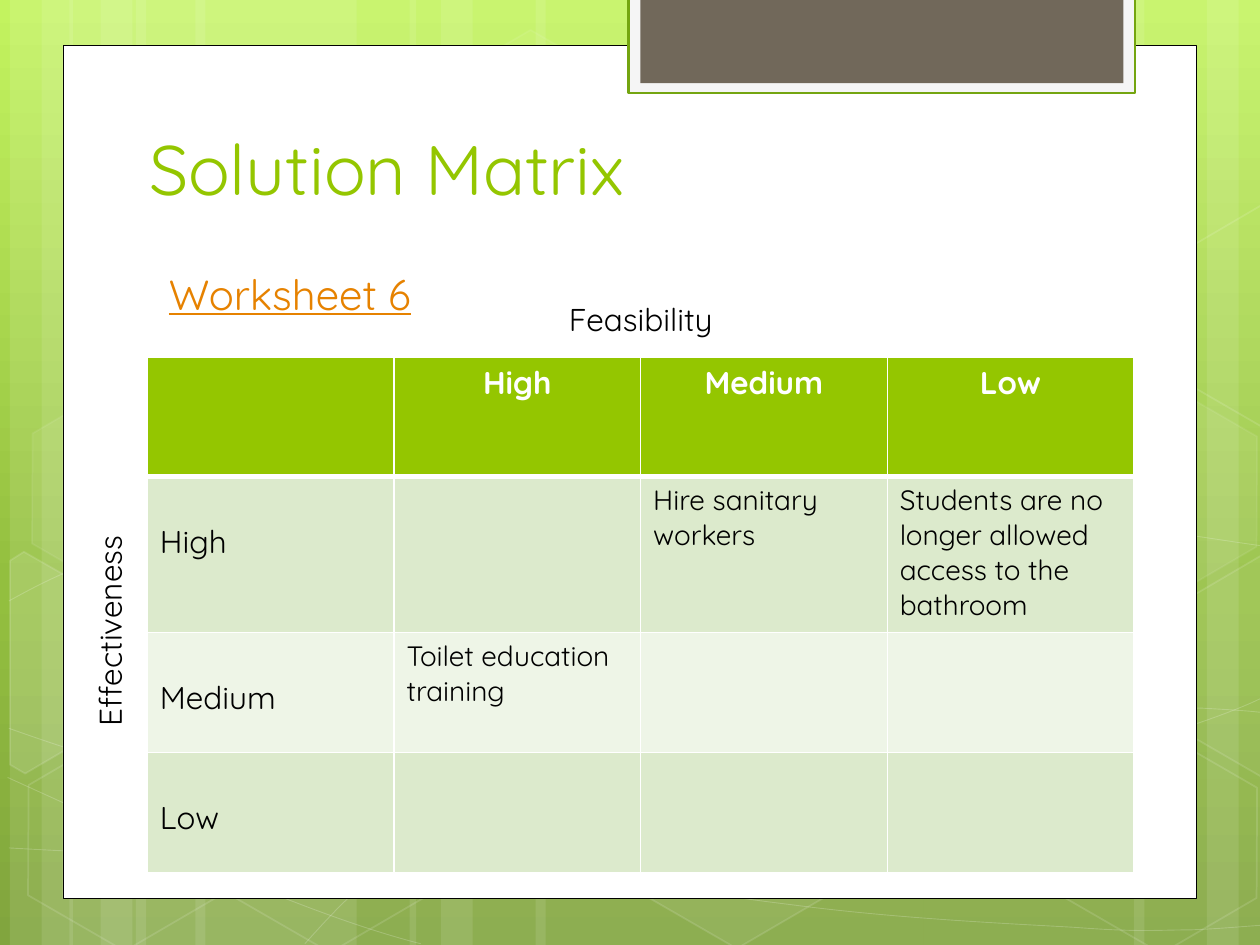
from copy import deepcopy
from dataclasses import dataclass
from typing import Optional

from lxml.etree import SubElement
from pptx import Presentation
from pptx.dml.color import RGBColor
from pptx.enum.shapes import MSO_SHAPE
from pptx.enum.text import MSO_ANCHOR, MSO_AUTO_SIZE, PP_ALIGN
from pptx.oxml.ns import qn
from pptx.util import Cm, Pt

FONT = "Quicksand"
WHITE = RGBColor(0xFF, 0xFF, 0xFF)
BLACK = RGBColor(0x00, 0x00, 0x00)
LIME = RGBColor(0x94, 0xC6, 0x00)
ORANGE = RGBColor(0xE6, 0x82, 0x00)
PALE = RGBColor(0xDC, 0xEA, 0xCC)
PALER = RGBColor(0xEE, 0xF5, 0xE7)
SMOKE = RGBColor(0xF5, 0xF5, 0xF5)
MOSS = RGBColor(0x74, 0xA5, 0x10)
TAUPE = RGBColor(0x71, 0x68, 0x5A)
SKY = [(0, RGBColor(0xC3, 0xF3, 0x5F)),
       (0.62, RGBColor(0x93, 0xBF, 0x3F)),
       (1, RGBColor(0x81, 0xA5, 0x3E))]
WIDTH, HEIGHT = 25.4, 19.05
GRID = Cm(0.0254)


@dataclass
class Box:
    left: float
    top: float
    width: float
    height: float

    def lengths(self) -> tuple:
        return Cm(self.left), Cm(self.top), Cm(self.width), Cm(self.height)


@dataclass
class Look:
    fill: Optional[RGBColor] = None
    fill_alpha: int = 100
    line: Optional[RGBColor] = None
    line_width: float = 1
    line_alpha: int = 100


@dataclass
class Hexagon:
    left: float
    top: float
    fill_alpha: int
    line_alpha: int


@dataclass
class CutHexagon:
    points: list
    fill_alpha: int


BANDS = [(2.74, 4.45), (0.2, 1.27), (0.84, 2.11), (3.94, 4.45), (1.4, 1.27),
         (2.03, 2.11), (18.62, 4.45), (24.33, 1.27), (22.86, 2.11),
         (10.8, 7.82), (8.26, 1.27), (8.89, 2.11)]
CURVES = [
    [(7, 673), (61, 676, 115, 679, 190, 678), (265, 677, 358, 675, 458, 665),
     (558, 655, 700, 636, 792, 617), (883, 598, 977, 568, 1007, 551)],
    [(7, 477), (36, 461, 65, 446, 121, 431), (178, 416, 259, 394, 347, 387),
     (436, 380, 544, 379, 654, 387), (764, 395, 947, 426, 1007, 434)],
    [(6, 617), (127, 672, 247, 727, 334, 749)],
    [(7, 578), (38, 589, 70, 600, 128, 616), (186, 631, 273, 656, 357, 673),
     (440, 690, 545, 708, 628, 718), (711, 729, 800, 733, 853, 736),
     (905, 740, 919, 738, 945, 738), (971, 737, 989, 735, 1007, 734)],
    [(242, 749), (260, 729, 278, 709, 302, 691), (326, 673, 360, 653, 388, 639),
     (416, 625, 433, 619, 470, 609), (506, 599, 573, 585, 608, 578),
     (644, 571, 649, 571, 680, 569), (711, 566, 760, 563, 794, 562),
     (829, 561, 886, 562, 886, 562), (953, 562),
     (971, 563, 988, 564, 997, 565), (1006, 566, 1003, 565, 1006, 566)],
]
HEXAGONS = [Hexagon(8.48, 0.91, 4, 8), Hexagon(12.62, 14.96, 6, 12),
            Hexagon(0.28, 15.01, 0, 12), Hexagon(0.36, 7.92, 7, 8),
            Hexagon(4.42, 15.04, 0, 12), Hexagon(19.13, 11.51, 10, 12),
            Hexagon(21.18, 15.06, 0, 12), Hexagon(21.18, 7.98, 7, 8)]
CUT_HEXAGONS = [
    CutHexagon([(8, 445), (19, 438), (96, 482), (95, 570), (20, 614), (8, 607)], 10),
    CutHexagon([(926, 485), (1001, 441), (1009, 446), (1009, 613), (1002, 617), (926, 573)], 4),
    CutHexagon([(926, 207), (1001, 163), (1010, 168), (1009, 335), (1002, 339), (926, 295)], 0),
]
LEVELS = ["High", "Medium", "Low"]
SOLUTIONS = {(1, 2): "Hire sanitary workers",
             (1, 3): "Students are no longer allowed access to the bathroom",
             (2, 1): "Toilet education training"}
ROW_HEIGHTS = [2.4, 3.15, 2.42, 2.42]
ROW_FILLS = [LIME, PALE, PALER, PALE]


def write(tf, text: str, *, size: float, color: RGBColor = BLACK, bold: bool = False,
          underline: bool = False, align=PP_ALIGN.LEFT) -> None:
    p = tf.paragraphs[0]
    p.alignment = align
    p.space_before = Pt(0)
    r = p.add_run()
    r.text = text
    r.font.name = FONT
    r.font.size = Pt(size)
    r.font.color.rgb = color
    r.font.bold = bold
    r.font.underline = underline


def set_alpha(sp, where: str, percent: int) -> None:
    if percent < 100:
        for clr in sp.element.xpath(f"p:spPr/{where}a:solidFill/a:srgbClr"):
            SubElement(clr, qn("a:alpha")).set("val", str(percent * 1000))


def style(sp, look: Look) -> None:
    sp.shadow.inherit = False
    if look.fill is None or look.fill_alpha == 0:
        sp.fill.background()
    else:
        sp.fill.solid()
        sp.fill.fore_color.rgb = look.fill
        set_alpha(sp, "", look.fill_alpha)
    if look.line is None:
        sp.line.fill.background()
    else:
        sp.line.color.rgb = look.line
        sp.line.width = Pt(look.line_width)
        set_alpha(sp, "a:ln/", look.line_alpha)


def add_preset(shapes, kind, box: Box, look: Look):
    sp = shapes.add_shape(kind, *box.lengths())
    style(sp, look)
    return sp


def add_outline(shapes, points: list, look: Look, close: bool):
    builder = shapes.build_freeform(*points[0], scale=GRID)
    builder.add_line_segments(points[1:], close=close)
    sp = builder.convert_to_shape()
    style(sp, look)
    return sp


def add_curve(shapes, parts: list, look: Look) -> None:
    points = [part[k:k + 2] for part in parts for k in range(0, len(part), 2)]
    sp = add_outline(shapes, points, look, False)
    lines = iter(sp.element.findall(".//" + qn("a:lnTo")))
    for part in parts[1:]:
        first = next(lines)
        if len(part) == 6:
            first.tag = qn("a:cubicBezTo")
            for line in (next(lines), next(lines)):
                first.append(line[0])
                line.getparent().remove(line)


def paint_background(slide) -> None:
    fill = slide.background.fill
    fill.gradient()
    fill.gradient_angle = 270
    stops = slide.element.find(".//" + qn("a:gsLst"))
    stops.append(deepcopy(stops[0]))
    for stop, (position, color) in zip(fill.gradient_stops, SKY):
        stop.position = position
        stop.color.rgb = color


def add_decor(shapes) -> None:
    for left, width in BANDS:
        add_preset(shapes, MSO_SHAPE.RECTANGLE, Box(left, 0, width, HEIGHT), Look(WHITE, 10))
    for curve in CURVES:
        add_curve(shapes, curve, Look(None, 0, WHITE, 0.5, 20))
    for h in HEXAGONS:
        sp = add_preset(shapes, MSO_SHAPE.HEXAGON, Box(h.left, h.top, 4.45, 3.86),
                        Look(WHITE, h.fill_alpha, WHITE, 1, h.line_alpha))
        sp.adjustments[0] = 0.285
        sp.rotation = 30
    for c in CUT_HEXAGONS:
        add_outline(shapes, c.points, Look(WHITE, c.fill_alpha, WHITE, 1, 12), True)
    for box, look in [(Box(1.27, 0.91, 22.86, 17.2), Look(WHITE, line=BLACK, line_width=0.5)),
                      (Box(12.67, -0.05, 10.21, 1.93), Look(SMOKE, line=MOSS, line_width=1.25)),
                      (Box(12.91, -0.05, 9.74, 1.73), Look(TAUPE))]:
        add_preset(shapes, MSO_SHAPE.RECTANGLE, box, look)


def place(slide, sp, box: Box, anchor):
    sp.left, sp.top, sp.width, sp.height = box.lengths()
    slide.shapes.element.append(sp.element)
    tf = sp.text_frame
    tf.auto_size = MSO_AUTO_SIZE.NONE
    tf.vertical_anchor = anchor
    return tf


def add_label(shapes, text: str, box: Box, rotation: float = 0) -> None:
    sp = shapes.add_textbox(*box.lengths())
    sp.rotation = rotation
    sp.text_frame.word_wrap = False
    write(sp.text_frame, text, size=18)


def set_borders(cell, row: int) -> None:
    tc_pr = cell._tc.get_or_add_tcPr()
    for side, width in [("L", 1), ("R", 1), ("T", 3 if row == 1 else 1), ("B", 3 if row == 0 else 1)]:
        ln = SubElement(tc_pr, qn(f"a:ln{side}"), w=str(Pt(width)))
        SubElement(SubElement(ln, qn("a:solidFill")), qn("a:srgbClr"), val=str(WHITE))


def add_matrix(shapes) -> None:
    size = len(LEVELS) + 1
    box = Box(2.97, 7.2, 19.89, sum(ROW_HEIGHTS))
    table = shapes.add_table(size, size, *box.lengths()).table
    for i in range(size):
        table.columns[i].width = Cm(box.width / size)
        table.rows[i].height = Cm(ROW_HEIGHTS[i])
        for j in range(size):
            cell = table.cell(i, j)
            set_borders(cell, i)
            cell.fill.solid()
            cell.fill.fore_color.rgb = ROW_FILLS[i]
            if i == 0 and j > 0:
                write(cell.text_frame, LEVELS[j - 1], size=18, color=WHITE, bold=True,
                      align=PP_ALIGN.CENTER)
            elif j == 0 and i > 0:
                cell.margin_top = Cm(0.92)
                write(cell.text_frame, LEVELS[i - 1], size=18)
            elif (i, j) in SOLUTIONS:
                write(cell.text_frame, SOLUTIONS[i, j], size=16)


def main() -> None:
    prs = Presentation()
    prs.slide_width, prs.slide_height = Cm(WIDTH), Cm(HEIGHT)
    slide = prs.slides.add_slide(prs.slide_layouts[1])
    title, body = slide.placeholders
    paint_background(slide)
    add_decor(slide.shapes)
    tf = place(slide, title, Box(2.75, 2.34, 19.51, 2.01), MSO_ANCHOR.BOTTOM)
    write(tf, "Solution Matrix", size=40, color=LIME)
    tf = place(slide, body, Box(2.97, 5.28, 18.82, 1.8), MSO_ANCHOR.TOP)
    p_pr = tf.paragraphs[0]._p.get_or_add_pPr()
    p_pr.set("marL", str(Cm(0.18)))
    p_pr.set("indent", "0")
    SubElement(p_pr, qn("a:buNone"))
    write(tf, "Worksheet 6", size=24, color=ORANGE, underline=True)
    add_matrix(slide.shapes)
    add_label(slide.shapes, "Feasibility", Box(11.22, 5.92, 3.45, 1.02))
    add_label(slide.shapes, "Effectiveness", Box(-0.05, 12.12, 4.52, 1.02), 270)
    prs.save("out.pptx")


if __name__ == "__main__":
    main()
